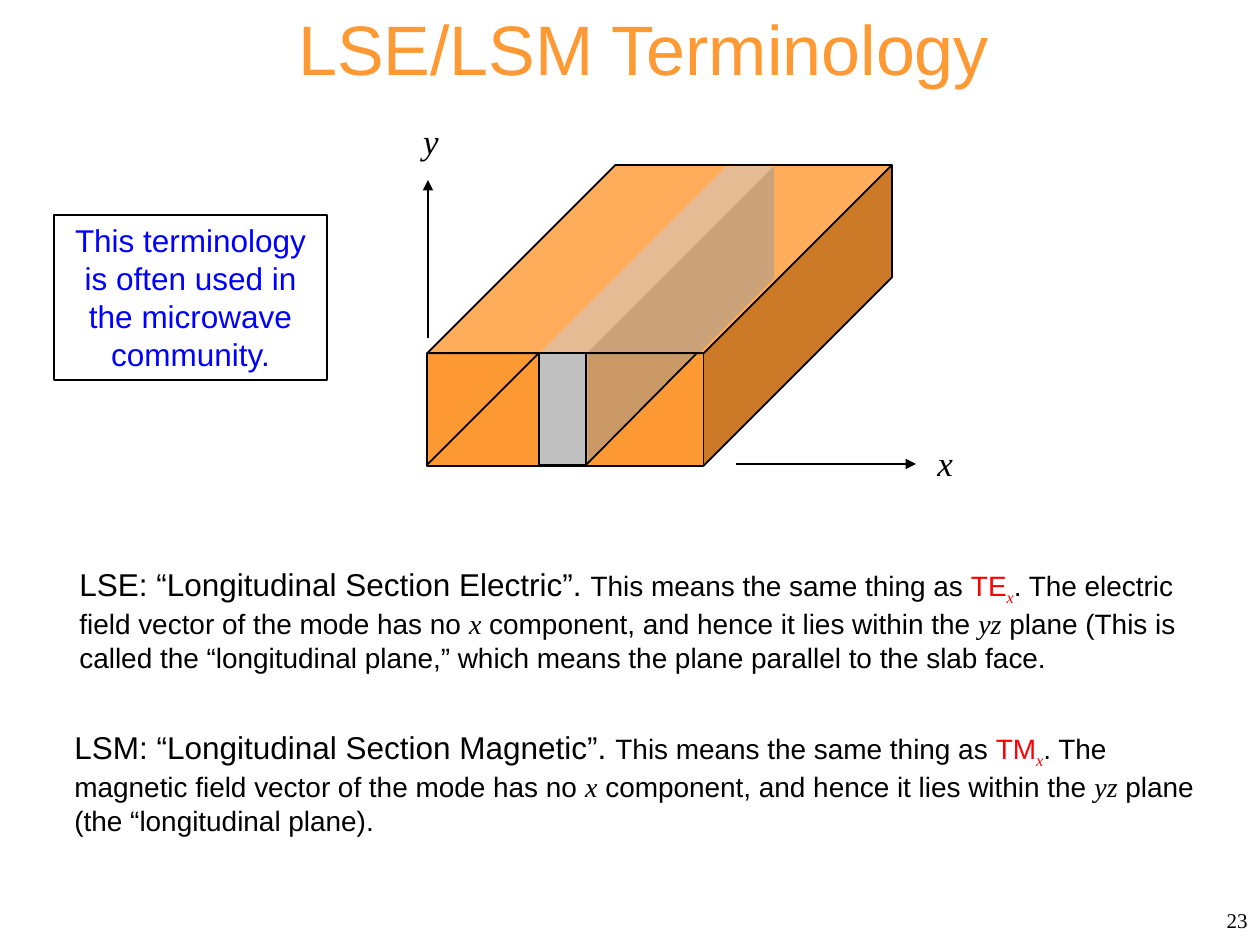
import pptx
import pptx.util
import pptx.dml.color
import pptx.enum.shapes
import pptx.enum.text
import pptx.oxml
import pptx.oxml.ns

RGBColor = pptx.dml.color.RGBColor
ORANGE = RGBColor(0xFF, 0x99, 0x33)
SILVER = RGBColor(0xC0, 0xC0, 0xC0)
BLACK = RGBColor(0, 0, 0)
BLUE = RGBColor(0, 0, 0xFF)
RED = RGBColor(0xFF, 0, 0)
SANS, SERIF = "Arial", "Times New Roman"
ALIGN = pptx.enum.text.PP_ALIGN
ANCHOR = pptx.enum.text.MSO_ANCHOR
FIT = pptx.enum.text.MSO_AUTO_SIZE
SHAPE = pptx.enum.shapes.MSO_SHAPE
PX_PER_INCH = 126


def px(*lengths):
    return [round(length * 914400 / PX_PER_INCH) for length in lengths]


def add_element(parent, tag, **attributes):
    child = pptx.oxml.parse_xml(f"<a:{tag} {pptx.oxml.ns.nsdecls('a')}/>")
    for name, value in attributes.items():
        child.set(name, value)
    parent.append(child)


def style_span(span, size, color, font=SANS, italic=False):
    span.font.size = pptx.util.Pt(size)
    span.font.color.rgb = color
    span.font.name = font
    span.font.italic = italic


def write_text(shape, text, size, color, align, font=SANS, italic=False):
    frame = shape.text_frame
    frame.word_wrap = True
    frame.text = text
    para = frame.paragraphs[0]
    para.alignment = align
    style_span(para.runs[0], size, color, font, italic)
    return frame


def add_title(page, box):
    title = page.shapes.add_textbox(*px(*box))
    write_text(title, "LSE/LSM Terminology", 40, ORANGE, ALIGN.CENTER)


def add_page_number(page, box):
    number = page.shapes.add_textbox(*px(*box))
    frame = write_text(number, "23", 12, BLACK, ALIGN.RIGHT, SERIF)
    frame.vertical_anchor = ANCHOR.MIDDLE


def add_note(page, box):
    note = page.shapes.add_shape(SHAPE.RECTANGLE, *px(*box))
    note.shadow.inherit = False
    note.fill.background()
    note.line.color.rgb = BLACK
    note.line.width = pptx.util.Pt(0.75)
    text = "This terminology is often used in the microwave community."
    frame = write_text(note, text, 18, BLUE, ALIGN.CENTER)
    frame.vertical_anchor = ANCHOR.TOP


def add_definition(page, box, term, mode, middle, ending):
    frame = page.shapes.add_textbox(*px(*box)).text_frame
    frame.word_wrap = True
    para = frame.paragraphs[0]
    pieces = [
        (term, 18, BLACK),
        ("This means the same thing as ", 16, BLACK),
        (mode, 16, RED),
        ("x", 16, RED, SERIF, True),
        (middle, 16, BLACK),
        ("x", 16, BLACK, SERIF, True),
        (" component, and hence it lies within the ", 16, BLACK),
        ("yz", 16, BLACK, SERIF, True),
        (ending, 16, BLACK),
    ]
    for text, *style in pieces:
        span = para.add_run()
        span.text = text
        style_span(span, *style)
    subscript = para.runs[3]
    subscript.font._element.set("baseline", "-25000")


def add_waveguide(page, box):
    left, top, width, height = box

    def add_solid(kind, x, y, w, h, color, outlined=True):
        solid = page.shapes.add_shape(kind, *px(left + x, top + y, w, h))
        solid.shadow.inherit = False
        solid.fill.solid()
        solid.fill.fore_color.rgb = color
        if outlined:
            solid.line.color.rgb = BLACK
            solid.line.width = pptx.util.Pt(1)
        else:
            solid.line.fill.background()
        return solid

    def add_line(x1, y1, x2, y2, arrow=False):
        line = page.shapes.add_connector(
            pptx.enum.shapes.MSO_CONNECTOR.STRAIGHT,
            *px(left + x1, top + y1, left + x2, top + y2))
        line.line.color.rgb = BLACK
        line.line.width = pptx.util.Pt(1)
        if arrow:
            add_element(line.line._get_or_add_ln(), "tailEnd", type="triangle")
        add_element(line._element.spPr, "effectLst")

    def add_label(text, x, y):
        label = page.shapes.add_textbox(*px(left + x, top + y, 42, 55))
        frame = write_text(label, text, 20, BLACK, ALIGN.CENTER, SERIF, True)
        frame.word_wrap = False
        frame.auto_size = FIT.SHAPE_TO_FIT_TEXT

    front_top = height - 112
    add_line(18, 225, 18, 67, arrow=True)
    add_line(326, 351, 506, 351, arrow=True)
    guide = add_solid(SHAPE.CUBE, 17, 52, 465, 301, ORANGE)
    guide.adjustments[0] = 0.626
    slab = add_solid(SHAPE.CUBE, 131, 53, 233, 298, SILVER, outlined=False)
    slab.adjustments[0] = 0.798
    tint = slab.fill._xPr.find(".//" + pptx.oxml.ns.qn("a:srgbClr"))
    add_element(tint, "alpha", val="50000")
    add_line(17, height, 129, front_top)
    add_solid(SHAPE.RECTANGLE, 129, front_top, 47, 112, SILVER)
    add_line(176, height, 287, front_top)
    add_line(17, front_top, 293, front_top)
    add_label("x", width - 42, 322)
    add_label("y", 0, 0)


def main():
    deck = pptx.Presentation()
    deck.slide_width, deck.slide_height = px(1260, 945)
    page = deck.slides.add_slide(deck.slide_layouts[6])
    add_title(page, (106, -1, 1075, 97))
    add_waveguide(page, (410, 113, 556, 352))
    add_page_number(page, (966, 895, 294, 50))
    add_definition(
        page, (67, 559, 1152, 118),
        "LSE: “Longitudinal Section Electric”. ", "TE",
        ". The electric field vector of the mode has no ",
        " plane (This is called the “longitudinal plane,” which means "
        "the plane parallel to the slab face.")
    add_definition(
        page, (62, 722, 1152, 118),
        "LSM: “Longitudinal Section Magnetic”. ", "TM",
        ". The magnetic field vector of the mode has no ",
        " plane (the “longitudinal plane).")
    add_note(page, (54, 215, 273, 165))
    deck.save("out.pptx")


if __name__ == "__main__":
    main()
